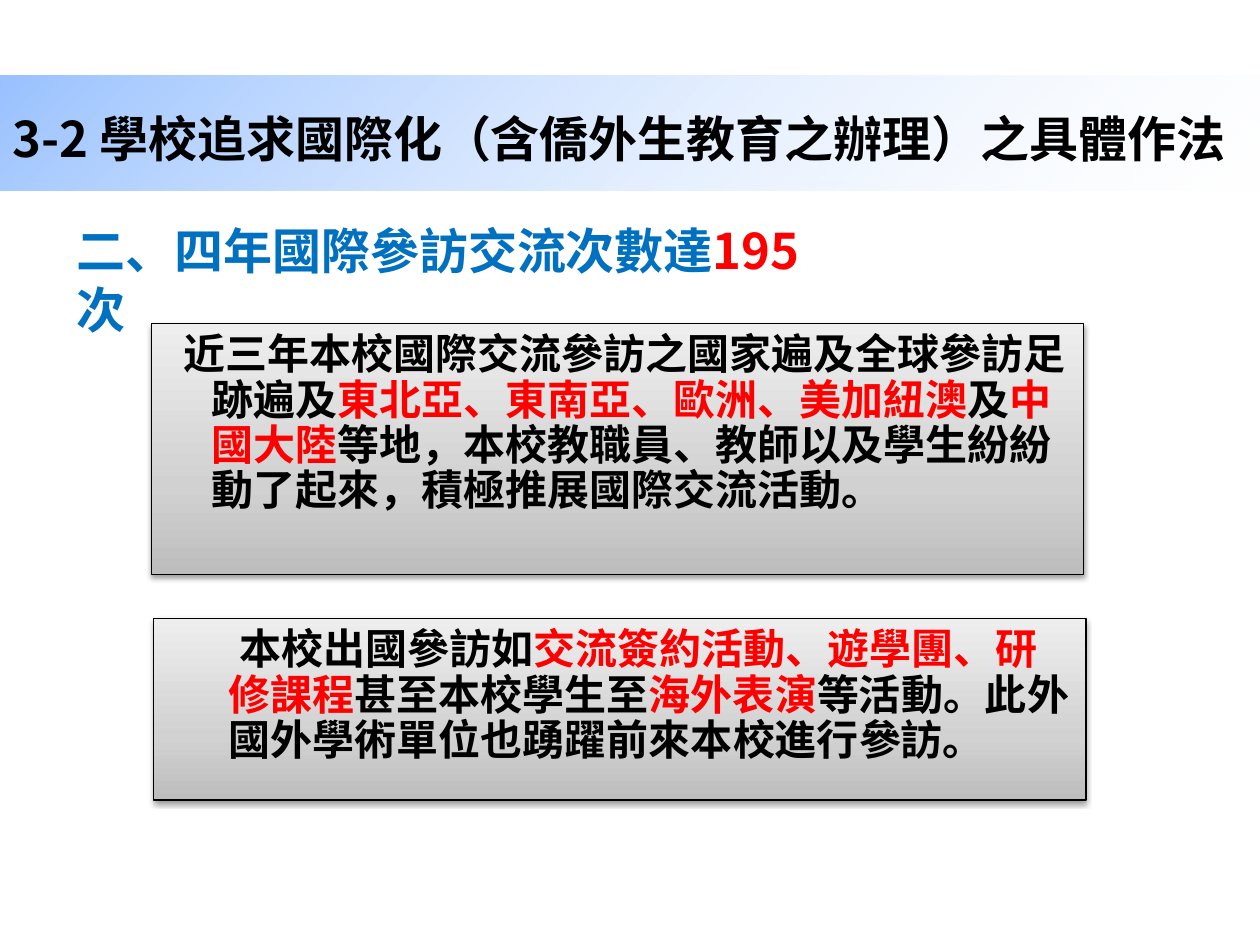
from dataclasses import dataclass

from lxml import etree
from pptx import Presentation
from pptx.dml.color import RGBColor
from pptx.enum.shapes import MSO_SHAPE
from pptx.enum.text import MSO_ANCHOR, MSO_AUTO_SIZE, PP_ALIGN
from pptx.oxml.ns import qn
from pptx.util import Pt

RECTANGLE = MSO_SHAPE.RECTANGLE
TOP, MIDDLE = MSO_ANCHOR.TOP, MSO_ANCHOR.MIDDLE
NO_FIT, GROW = MSO_AUTO_SIZE.NONE, MSO_AUTO_SIZE.SHAPE_TO_FIT_TEXT
LEFT = PP_ALIGN.LEFT

FONT = "Noto Sans CJK SC"
BLACK = RGBColor(0x00, 0x00, 0x00)
RED = RGBColor(0xFF, 0x00, 0x00)
BLUE = RGBColor(0x00, 0x70, 0xC0)
WHITE = RGBColor(0xFF, 0xFF, 0xFF)
SKY = RGBColor(0x5E, 0x9E, 0xFF)
DARK_GREY = RGBColor(0xBD, 0xBD, 0xBD)
MID_GREY = RGBColor(0xD1, 0xD1, 0xD1)
LIGHT_GREY = RGBColor(0xEE, 0xEE, 0xEE)


@dataclass
class Span:
    text: str
    color: RGBColor = BLACK


@dataclass
class Stop:
    percent: int
    color: RGBColor
    alpha: int = 100


@dataclass
class Panel:
    left: float
    top: float
    height: float
    margin: float
    first_indent: float
    spans: list[Span]


PANEL_WIDTH = 532.8
PANEL_STOPS = [Stop(0, DARK_GREY), Stop(35, MID_GREY), Stop(100, LIGHT_GREY)]
PANELS = [
    Panel(86.4, 185, 143.3, 27.4, -15.8, [
        Span("近三年本校國際交流參訪之國家遍及全球參訪足跡遍及"),
        Span("東北亞、東南亞、歐洲、美加紐澳", RED),
        Span("及"),
        Span("中國大陸", RED),
        Span("等地，本校教職員、教師以及學生紛紛動了起來，積極推展國際交流活動。"),
    ]),
    Panel(87.8, 353.5, 103.7, 36, 5.8, [
        Span("本校出國參訪如"),
        Span("交流簽約活動、遊學團、研修課程", RED),
        Span("甚至本校學生至"),
        Span("海外表演", RED),
        Span("等活動。此外國外學術單位也踴躍前來本校進行參訪。"),
    ]),
]


def add_child(parent, tag: str, **attributes):
    return etree.SubElement(parent, qn(tag), {k: str(v) for k, v in attributes.items()})


def add_color(parent, color: RGBColor, alpha: int) -> None:
    node = add_child(parent, "a:srgbClr", val=color)
    if alpha < 100:
        add_child(node, "a:alpha", val=alpha * 1000)


def fill_gradient(shape, stops: list[Stop], angle: int | None = None) -> None:
    """Linear at the given angle, or circular from the bottom right corner."""
    gradient = etree.Element(qn("a:gradFill"), rotWithShape="1")
    stop_list = add_child(gradient, "a:gsLst")
    for stop in stops:
        node = add_child(stop_list, "a:gs", pos=stop.percent * 1000)
        add_color(node, stop.color, stop.alpha)
    if angle is None:
        circle = add_child(gradient, "a:path", path="circle")
        add_child(circle, "a:fillToRect", l=100000, t=100000)
    else:
        add_child(gradient, "a:lin", ang=angle * 60000, scaled=0)
    shape.element.spPr.find(qn("a:prstGeom")).addnext(gradient)


def add_shadow(shape) -> None:
    effects = shape.element.spPr.find(qn("a:effectLst"))
    shadow = add_child(effects, "a:outerShdw", blurRad=Pt(3.1), dist=Pt(1.6),
                       dir=90 * 60000, rotWithShape=0)
    add_color(shadow, BLACK, 38)


def add_rectangle(page, left: float, top: float, width: float, height: float):
    box = page.shapes.add_shape(RECTANGLE, Pt(left), Pt(top), Pt(width), Pt(height))
    box.shadow.inherit = False
    return box


def write(box, spans: list[Span], size: float, anchor=TOP, fit=NO_FIT):
    frame = box.text_frame
    frame.word_wrap = True
    frame.auto_size = fit
    frame.vertical_anchor = anchor
    para = frame.paragraphs[0]
    para.alignment = LEFT
    for span in spans:
        run = para.add_run()
        run.text = span.text
        run.font.size = Pt(size)
        run.font.bold = True
        run.font.name = FONT
        run.font.color.rgb = span.color
        add_child(run.font._element, "a:ea", typeface=FONT)
    return para


def add_panel(page, panel: Panel) -> None:
    box = add_rectangle(page, panel.left, panel.top, PANEL_WIDTH, panel.height)
    fill_gradient(box, PANEL_STOPS, angle=270)
    box.line.color.rgb = BLACK
    box.line.width = Pt(0.75)
    add_shadow(box)
    para = write(box, panel.spans, 24)
    para.line_spacing = 0.9
    box.text_frame.margin_top = Pt(5.6)
    properties = para._p.get_or_add_pPr()
    properties.set("marL", str(Pt(panel.margin)))
    properties.set("indent", str(Pt(panel.first_indent)))


def main() -> None:
    deck = Presentation()
    deck.slide_width, deck.slide_height = Pt(720), Pt(540)
    page = deck.slides.add_slide(deck.slide_layouts[5])

    # Title on its gradient band
    title = page.shapes.title
    title.left, title.top, title.width, title.height = Pt(0), Pt(56.2), Pt(720), Pt(45.4)
    write(title, [Span("3-2 學校追求國際化（含僑外生教育之辦理）之具體作法")], 28, MIDDLE)
    band = add_rectangle(page, 0, 43.2, 720, 65.5)
    fill_gradient(band, [Stop(0, WHITE, 15), Stop(100, SKY, 63)])
    band.line.fill.background()
    title.element.addprevious(band.element)

    # Section heading
    heading = page.shapes.add_textbox(Pt(36.7), Pt(122.4), Pt(452.9), Pt(41))
    write(heading, [Span("二、四年國際參訪交流次數達", BLUE), Span("195", RED),
                    Span("次", BLUE)], 28, fit=GROW)

    # Grey text panels
    for panel in PANELS:
        add_panel(page, panel)

    deck.save("out.pptx")


if __name__ == "__main__":
    main()
